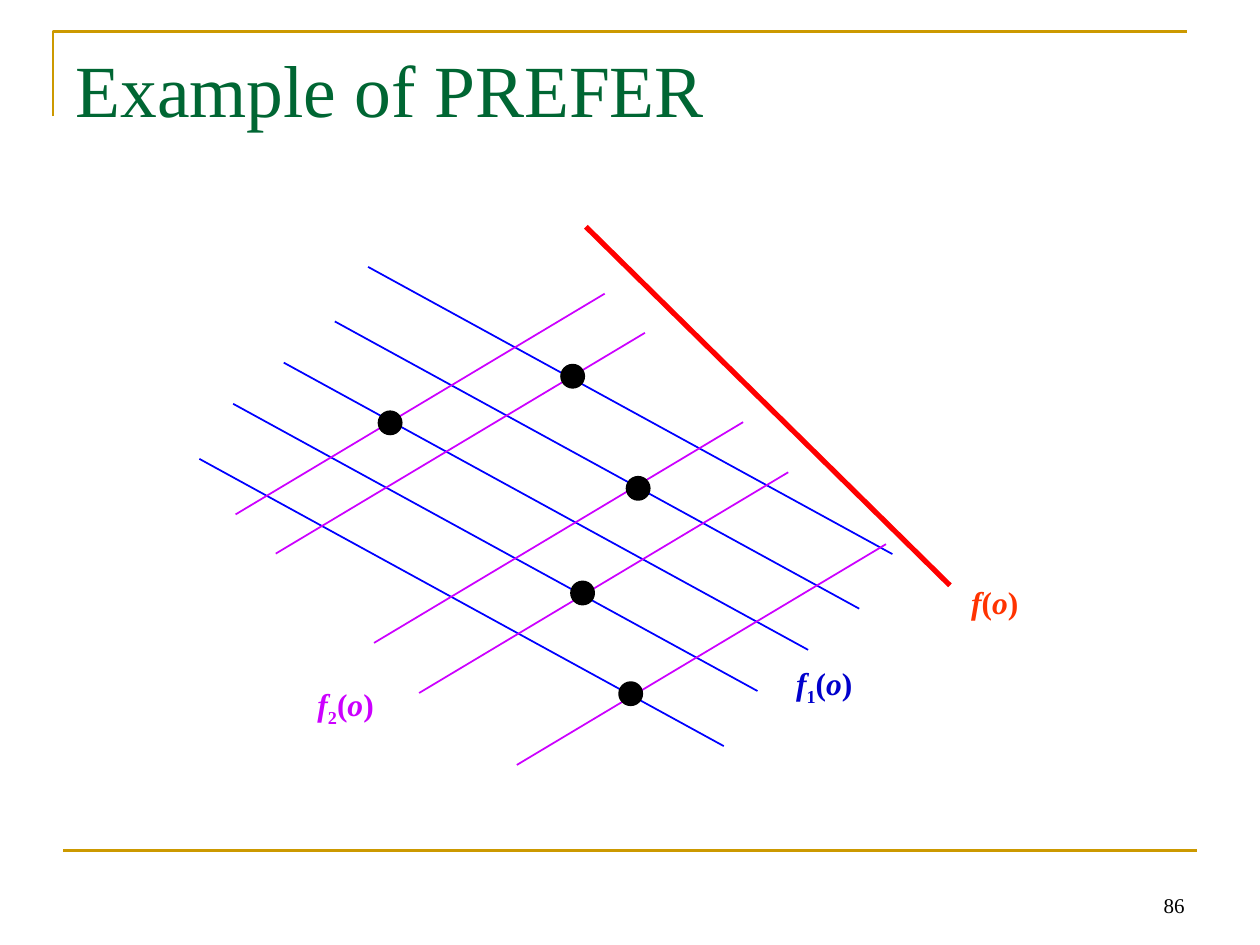
from typing import NamedTuple

from lxml import etree
from pptx import Presentation
from pptx import util as u
from pptx.dml.color import RGBColor
from pptx.enum import shapes, text
from pptx.oxml import ns

FONT = "Times New Roman"
GOLD, BLUE, PURPLE, RED = "CC9900", "0000FF", "CC00FF", "FF0000"
GREEN, BLACK, NAVY, ORANGE = "006633", "000000", "0000CC", "FF3300"


class Point(NamedTuple):
    x: float
    y: float


class Family(NamedTuple):
    color: str
    run: Point
    starts: list[Point]


class Label(NamedTuple):
    at: Point
    width: float
    color: str
    index: str


FAMILIES = [
    Family(BLUE, Point(10.57, 5.79), [
        Point(7.42, 5.38), Point(6.75, 6.48), Point(5.72, 7.31),
        Point(4.7, 8.14), Point(4.02, 9.25)]),
    Family(PURPLE, Point(-7.44, 4.45), [
        Point(12.19, 5.92), Point(13, 6.71), Point(14.98, 8.51),
        Point(15.89, 9.52), Point(17.86, 10.97)]),
]
LABELS = [
    Label(Point(19.33, 11.63), 1.47, ORANGE, ""),
    Label(Point(15.8, 13.26), 1.68, NAVY, "1"),
    Label(Point(6.15, 13.69), 1.68, PURPLE, "2"),
]
DOTS = [Point(12.65, 9.63), Point(11.33, 7.37), Point(7.65, 8.31),
        Point(11.53, 11.74), Point(12.5, 13.77)]
DOT_SIZE = 0.43


def rgb(value: str) -> RGBColor:
    return RGBColor.from_string(value)


def style(target, **values) -> None:
    for name, value in values.items():
        setattr(target, name, value)


def stroke(shape, color: str, width: float) -> None:
    shape.line.color.rgb = rgb(color)
    shape.line.width = u.Pt(width)


def add_line(s, start: Point, end: Point, color: str, width: float) -> None:
    line = s.shapes.add_connector(
        shapes.MSO_CONNECTOR.STRAIGHT, *map(u.Cm, (*start, *end)))
    stroke(line, color, width)
    etree.SubElement(line._element.spPr, ns.qn("a:effectLst"))


def add_run(p, words: str, size: float, color: str, **values):
    r = p.add_run()
    r.text = words
    style(r.font, name=FONT, size=u.Pt(size), **values)
    r.font.color.rgb = rgb(color)
    return r


def add_frame(s) -> None:
    corner = [Point(1.07, 2.34), Point(1.07, 0.64), Point(23.93, 0.64)]
    first, *rest = [(u.Cm(x), u.Cm(y)) for x, y in corner]
    builder = s.shapes.build_freeform(*first)
    builder.add_line_segments(rest, close=False)
    frame = builder.convert_to_shape()
    frame.fill.background()
    frame.shadow.inherit = False
    stroke(frame, GOLD, 1.5)
    add_line(s, Point(1.27, 17.15), Point(24.13, 17.15), GOLD, 1.5)


def add_title(s, words: str) -> None:
    sp = s.shapes.title
    style(sp, left=u.Cm(1.27), top=u.Cm(0.76), width=u.Cm(22.86), height=u.Cm(3.18))
    style(sp.text_frame, vertical_anchor=text.MSO_ANCHOR.TOP, word_wrap=True,
          auto_size=text.MSO_AUTO_SIZE.NONE)
    p = sp.text_frame.paragraphs[0]
    p.alignment = text.PP_ALIGN.LEFT
    add_run(p, words, 42, GREEN)


def add_label(s, label: Label) -> None:
    sp = s.shapes.add_textbox(*map(u.Cm, (*label.at, label.width, 1.02)))
    style(sp.text_frame, word_wrap=False,
          auto_size=text.MSO_AUTO_SIZE.SHAPE_TO_FIT_TEXT)
    p = sp.text_frame.paragraphs[0]
    for words in filter(None, ("f", label.index, "(", "o", ")")):
        r = add_run(p, words, 18, label.color, bold=True, italic=words in "fo")
        if words == label.index:
            r.font._element.set("baseline", "-25000")


def add_dot(s, at: Point) -> None:
    dot = s.shapes.add_shape(
        shapes.MSO_SHAPE.OVAL, *map(u.Cm, (*at, DOT_SIZE, DOT_SIZE)))
    dot.shadow.inherit = False
    dot.fill.solid()
    dot.fill.fore_color.rgb = rgb(BLACK)
    stroke(dot, BLACK, 2)


def add_page_number(s, number: str) -> None:
    sp = s.shapes.add_textbox(*map(u.Cm, (18.21, 17.35, 5.92, 1.27)))
    style(sp.text_frame, word_wrap=True, vertical_anchor=text.MSO_ANCHOR.BOTTOM)
    p = sp.text_frame.paragraphs[0]
    p.alignment = text.PP_ALIGN.RIGHT
    add_run(p, number, 12, BLACK)


def main() -> None:
    prs = Presentation()
    style(prs, slide_width=u.Cm(25.4), slide_height=u.Cm(19.05))
    s = prs.slides.add_slide(prs.slide_layouts[5])
    add_frame(s)
    add_title(s, "Example of PREFER")
    add_page_number(s, "86")
    for family in FAMILIES:
        for start in family.starts:
            end = Point(start.x + family.run.x, start.y + family.run.y)
            add_line(s, start, end, family.color, 1)
    add_line(s, Point(11.81, 4.57), Point(19.15, 11.8), RED, 3)
    for label in LABELS:
        add_label(s, label)
    for dot in DOTS:
        add_dot(s, dot)
    prs.save("out.pptx")


if __name__ == "__main__":
    main()
